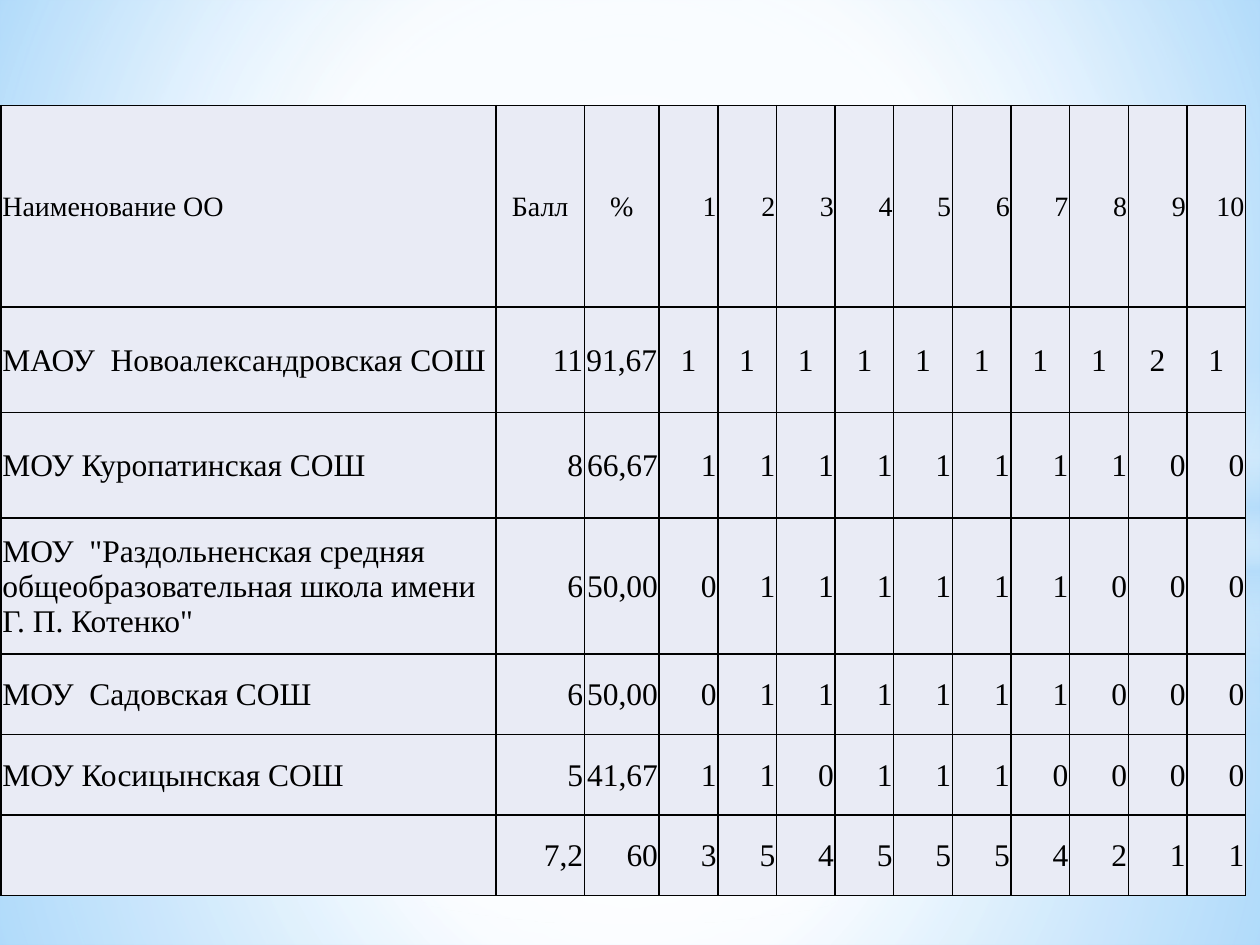
from lxml import etree
from pptx import Presentation
from pptx.dml.color import RGBColor
from pptx.enum import shapes, text
from pptx.oxml import ns
from pptx.util import Pt

# Content: one tuple per row
HEADER = ("Наименование ОО", "Балл", "%", *range(1, 11))
SCHOOLS = [
    ("МАОУ  Новоалександровская СОШ", "11", "91,67", 1, 1, 1, 1, 1, 1, 1, 1, 2, 1),
    ("МОУ Куропатинская СОШ", "8", "66,67", 1, 1, 1, 1, 1, 1, 1, 1, 0, 0),
    ('МОУ  "Раздольненская средняя общеобразовательная школа имени Г. П. Котенко"',
     "6", "50,00", 0, 1, 1, 1, 1, 1, 1, 0, 0, 0),
    ("МОУ  Садовская СОШ", "6", "50,00", 0, 1, 1, 1, 1, 1, 1, 0, 0, 0),
    ("МОУ Косицынская СОШ", "5", "41,67", 1, 1, 0, 1, 1, 1, 0, 0, 0, 0),
]
TOTALS = ("", "7,2", "60", 3, 5, 4, 5, 5, 5, 4, 2, 1, 1)
ROWS = [HEADER, *SCHOOLS, TOTALS]

# Table measures
COLUMN_WIDTHS = [282.8, 50.4, 42.8] + [33.52] * 10
ROW_HEIGHTS = [115.2, 60.3, 60.3, 77.7, 46, 46, 46]
TABLE_LEFT, TABLE_TOP = 0.7, 60.3
FONT, INK, CELL_FILL = "Times New Roman", "000000", "E9EBF5"

# Backdrop: gradient stops are (position %, colour, opacity %)
WIDTH, HEIGHT = 720, 540
WHITE, SKY = "FFFFFF", "B4DCFA"
CENTRE = (50, 50, 50, 50)
BASE_STOPS = [(0, "9ED5FF", 100), (60, WHITE, 100), (100, "5BB9FF", 100)]
BAND_STOPS = [(0, WHITE, 0), (29, WHITE, 30), (45, SKY, 40),
              (55, WHITE, 26), (65, SKY, 60), (100, WHITE, 0)]
# Each layer: horizon, band top, opacities of ground and sky, end of the glow
LAYERS = [
    (401.8, 296.6, (91, 76, 79), (89, 62, 79), 56),
    (304.6, 208.8, (92, 77, 80), (90, 63, 80), 54),
]


def rgb(colour):
    return RGBColor.from_string(colour)


def add_node(parent, tag, **attributes):
    return etree.SubElement(parent, ns.qn(tag), {k: str(v) for k, v in attributes.items()})


def set_gradient(fill, owner, stops, focus=None):
    """Radial gradient towards focus, or a vertical one without it."""
    fill.solid()
    solid = next(owner.iter(ns.qn("a:solidFill")))
    gradient = etree.Element(ns.qn("a:gradFill"), rotWithShape="1")
    stop_list = add_node(gradient, "a:gsLst")
    for position, colour, opacity in stops:
        stop = add_node(stop_list, "a:gs", pos=position * 1000)
        tint = add_node(stop, "a:srgbClr", val=colour)
        if opacity < 100:
            add_node(tint, "a:alpha", val=opacity * 1000)
    if focus:
        circle = add_node(gradient, "a:path", path="circle")
        add_node(circle, "a:fillToRect", **{side: v * 1000 for side, v in zip("ltrb", focus)})
    else:
        add_node(gradient, "a:lin", ang=5400000, scaled=0)
    solid.getparent().replace(solid, gradient)


def add_haze(slide, kind, top, height, stops, focus=None):
    haze = slide.shapes.add_shape(kind, 0, Pt(top), Pt(WIDTH), Pt(height))
    haze.shadow.inherit = False
    haze.line.fill.background()
    set_gradient(haze.fill, haze.element.spPr, stops, focus)


def add_backdrop(slide):
    set_gradient(slide.background.fill, slide.element.cSld, BASE_STOPS, (20, 10, 20, 60))
    rectangle, oval = shapes.MSO_SHAPE.RECTANGLE, shapes.MSO_SHAPE.OVAL
    colours = (WHITE, WHITE, SKY)
    for horizon, band_top, ground, sky, glow_end in LAYERS:
        add_haze(slide, rectangle, horizon, HEIGHT - horizon,
                 list(zip((0, 37, 100), colours, ground)), CENTRE)
        add_haze(slide, rectangle, 0, horizon,
                 list(zip((0, 48, 100), colours, sky)), CENTRE)
        add_haze(slide, rectangle, band_top, 180, BAND_STOPS)
        add_haze(slide, oval, 126, 401.8, [(0, WHITE, 100), (glow_end, WHITE, 0)], CENTRE)


def alignment(row, column):
    if column == 0:
        return text.PP_ALIGN.LEFT
    # Centred: the two header labels and the first school's results
    if (row == 0 and column < 3) or (row == 1 and column > 1):
        return text.PP_ALIGN.CENTER
    return text.PP_ALIGN.RIGHT


def format_cell(cell, value, size, align):
    cell.margin_left = cell.margin_right = cell.margin_top = Pt(0.7)
    cell.margin_bottom = 0
    cell.vertical_anchor = text.MSO_ANCHOR.MIDDLE
    cell.text_frame.text = str(value)
    paragraph = cell.text_frame.paragraphs[0]
    paragraph.alignment = align
    for run in paragraph.runs:
        run.font.name, run.font.size = FONT, Pt(size)
        run.font.color.rgb = rgb(INK)
    # Borders come before the fill in the cell properties
    properties = cell._tc.get_or_add_tcPr()
    for side in ("a:lnL", "a:lnR", "a:lnT", "a:lnB"):
        border = add_node(properties, side, w=Pt(1))
        add_node(add_node(border, "a:solidFill"), "a:srgbClr", val=INK)
    cell.fill.solid()
    cell.fill.fore_color.rgb = rgb(CELL_FILL)


def add_results(slide):
    results = slide.shapes.add_table(
        len(ROWS), len(HEADER), Pt(TABLE_LEFT), Pt(TABLE_TOP),
        Pt(sum(COLUMN_WIDTHS)), Pt(sum(ROW_HEIGHTS))).table
    for column, width in zip(results.columns, COLUMN_WIDTHS):
        column.width = Pt(width)
    for row, height in zip(results.rows, ROW_HEIGHTS):
        row.height = Pt(height)
    for r, values in enumerate(ROWS):
        for c, value in enumerate(values):
            format_cell(results.cell(r, c), value, 18 if r else 16, alignment(r, c))


def main():
    deck = Presentation()
    deck.slide_width, deck.slide_height = Pt(WIDTH), Pt(HEIGHT)
    slide = deck.slides.add_slide(deck.slide_layouts[6])
    add_backdrop(slide)
    add_results(slide)
    deck.save("out.pptx")


if __name__ == "__main__":
    main()
